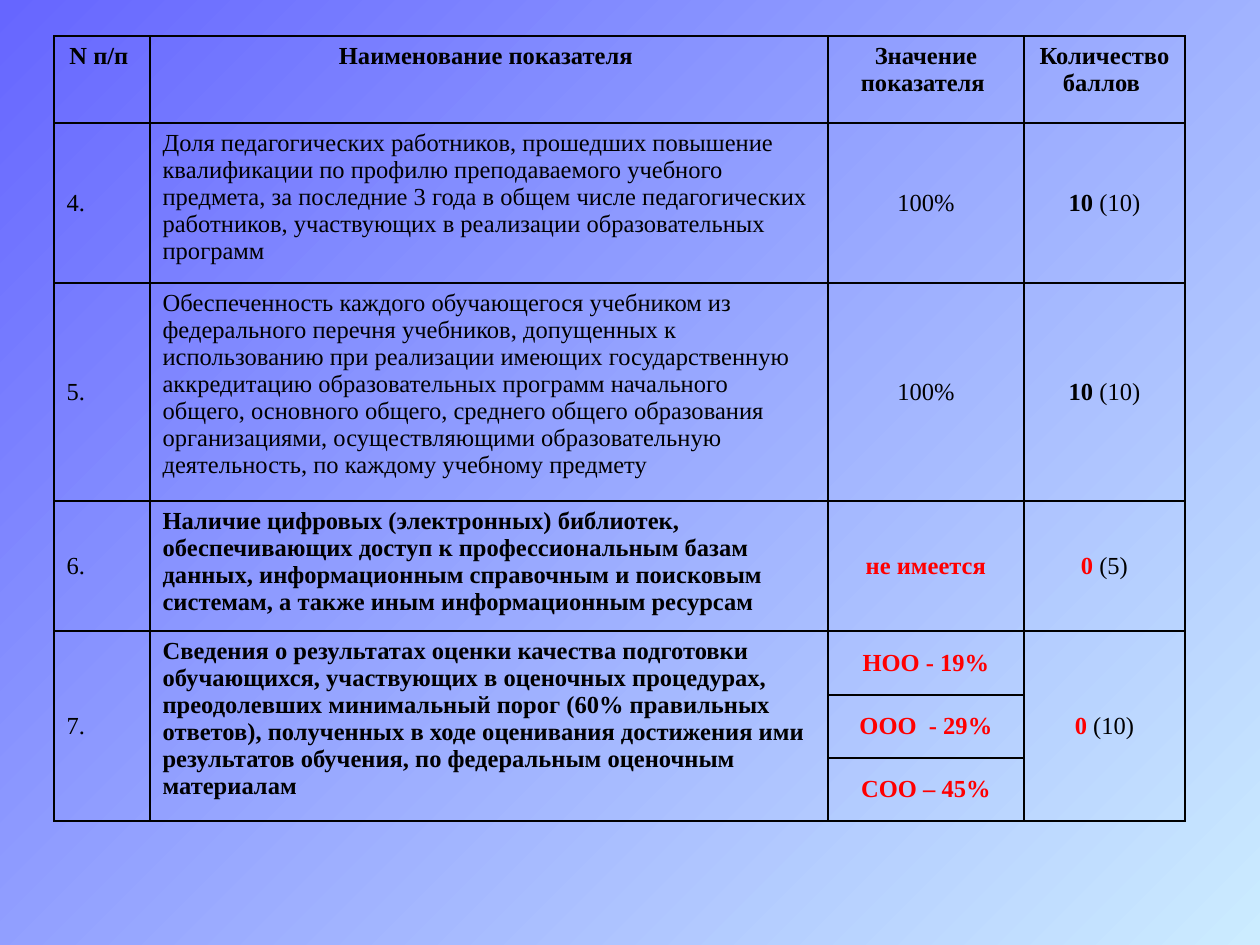
import itertools

import lxml.etree
import pptx
import pptx.dml.color
import pptx.enum.text
import pptx.oxml.ns
import pptx.util

EMU_PER_PX = 914400 / 126
BLACK, RED = "000000", "FF0000"
LEFT, CENTER = pptx.enum.text.PP_ALIGN.LEFT, pptx.enum.text.PP_ALIGN.CENTER
TOP, MIDDLE = pptx.enum.text.MSO_ANCHOR.TOP, pptx.enum.text.MSO_ANCHOR.MIDDLE

COLUMN_WIDTHS = [96, 678, 196, 161]
ROW_HEIGHTS = [87, 160, 218, 130, 64, 63, 63]
HEADINGS = ["N п/п ", "Наименование показателя ", "Значение показателя ", "Количество баллов "]

# Number, indicator, values (one table row each), points, maximum, whether the target is met
INDICATORS = [
    ("4.", "Доля педагогических работников, прошедших повышение квалификации по профилю "
     "преподаваемого учебного предмета, за последние 3 года в общем числе педагогических "
     "работников, участвующих в реализации образовательных программ",
     ["100%"], "10", "(10)", True),
    ("5.", "Обеспеченность каждого обучающегося учебником из федерального перечня учебников, "
     "допущенных к использованию при реализации имеющих государственную аккредитацию "
     "образовательных программ начального общего, основного общего, среднего общего "
     "образования организациями, осуществляющими образовательную деятельность, по каждому "
     "учебному предмету",
     ["100%"], "10", "(10)", True),
    ("6.", "Наличие цифровых (электронных) библиотек, обеспечивающих доступ к профессиональным "
     "базам данных, информационным справочным и поисковым системам, а также иным "
     "информационным ресурсам",
     ["не имеется"], "0", "(5)", False),
    ("7.", "Сведения о результатах оценки качества подготовки обучающихся, участвующих в "
     "оценочных процедурах, преодолевших минимальный порог (60% правильных ответов), "
     "полученных в ходе оценивания достижения ими результатов обучения, по федеральным "
     "оценочным материалам",
     ["НОО - 19%", "ООО  - 29%", "СОО – 45%"], "0", "(10)", False),
]


def px(length):
    return pptx.util.Emu(round(length * EMU_PER_PX))


def rgb(color):
    return pptx.dml.color.RGBColor.from_string(color)


class SlideWriter:
    """Holds the text and border style together with the current slide."""

    font_name = "Times New Roman"
    font_size = pptx.util.Pt(14)
    border_width = pptx.util.Pt(1)

    def __init__(self, slide):
        self.slide = slide

    def gradient_background(self, start, end):
        fill = self.slide.background.fill
        fill.gradient()
        fill.gradient_angle = 315
        for stop, color in zip(fill.gradient_stops, (start, end)):
            stop.color.rgb = rgb(color)

    def table(self, left, top, widths, heights):
        frame = self.slide.shapes.add_table(
            len(heights), len(widths), px(left), px(top), px(sum(widths)), px(sum(heights)))
        table = frame.table
        table.first_row = table.horz_banding = False
        for column, width in zip(table.columns, widths):
            column.width = px(width)
        for row, height in zip(table.rows, heights):
            row.height = px(height)
        for cell in table.iter_cells():
            self.borders(cell, BLACK)
            cell.fill.background()
        return table

    def borders(self, cell, color):
        properties = cell._tc.get_or_add_tcPr()
        qn = pptx.oxml.ns.qn
        for side in ("a:lnL", "a:lnR", "a:lnT", "a:lnB"):
            line = lxml.etree.SubElement(properties, qn(side), w=str(self.border_width))
            fill = lxml.etree.SubElement(line, qn("a:solidFill"))
            lxml.etree.SubElement(fill, qn("a:srgbClr"), val=color)

    def cell_text(self, cell, spans, align=LEFT, anchor=TOP, margins=None):
        """Write spans of (text, bold, color); margins are (horizontal, vertical) px."""
        cell.vertical_anchor = anchor
        if margins:
            cell.margin_left = cell.margin_right = px(margins[0])
            cell.margin_top = cell.margin_bottom = px(margins[1])
        para = cell.text_frame.paragraphs[0]
        para.alignment = align
        for text, bold, color in spans:
            span = para.add_run()
            span.text = text
            span.font.name = self.font_name
            span.font.size = self.font_size
            span.font.bold = bold
            span.font.color.rgb = rgb(color)


def fill_indicator(writer, table, row, indicator):
    number, name, values, points, maximum, met = indicator
    color = BLACK if met else RED
    last = row + len(values) - 1
    if last > row:
        for column in (0, 1, 3):
            table.cell(row, column).merge(table.cell(last, column))
    writer.cell_text(table.cell(row, 0), [(number, False, BLACK)], anchor=MIDDLE)
    writer.cell_text(table.cell(row, 1), [(name, not met, BLACK)])
    for offset, value in enumerate(values):
        writer.cell_text(table.cell(row + offset, 2), [(value, not met, color)],
                         CENTER, MIDDLE, (9, 0))
    score = [(points + " ", True, color), (maximum, False, BLACK)]
    writer.cell_text(table.cell(row, 3), score, CENTER, MIDDLE, (9, 0))


def main():
    deck = pptx.Presentation()
    deck.slide_width, deck.slide_height = px(1260), px(945)
    writer = SlideWriter(deck.slides.add_slide(deck.slide_layouts[6]))
    writer.gradient_background("6666FF", "CCECFF")

    table = writer.table(54, 36, COLUMN_WIDTHS, ROW_HEIGHTS)
    for column, heading in enumerate(HEADINGS):
        writer.cell_text(table.cell(0, column), [(heading, True, BLACK)], CENTER)
    row_counts = [len(indicator[2]) for indicator in INDICATORS]
    for row, indicator in zip(itertools.accumulate(row_counts, initial=1), INDICATORS):
        fill_indicator(writer, table, row, indicator)

    deck.save("out.pptx")


if __name__ == "__main__":
    main()
